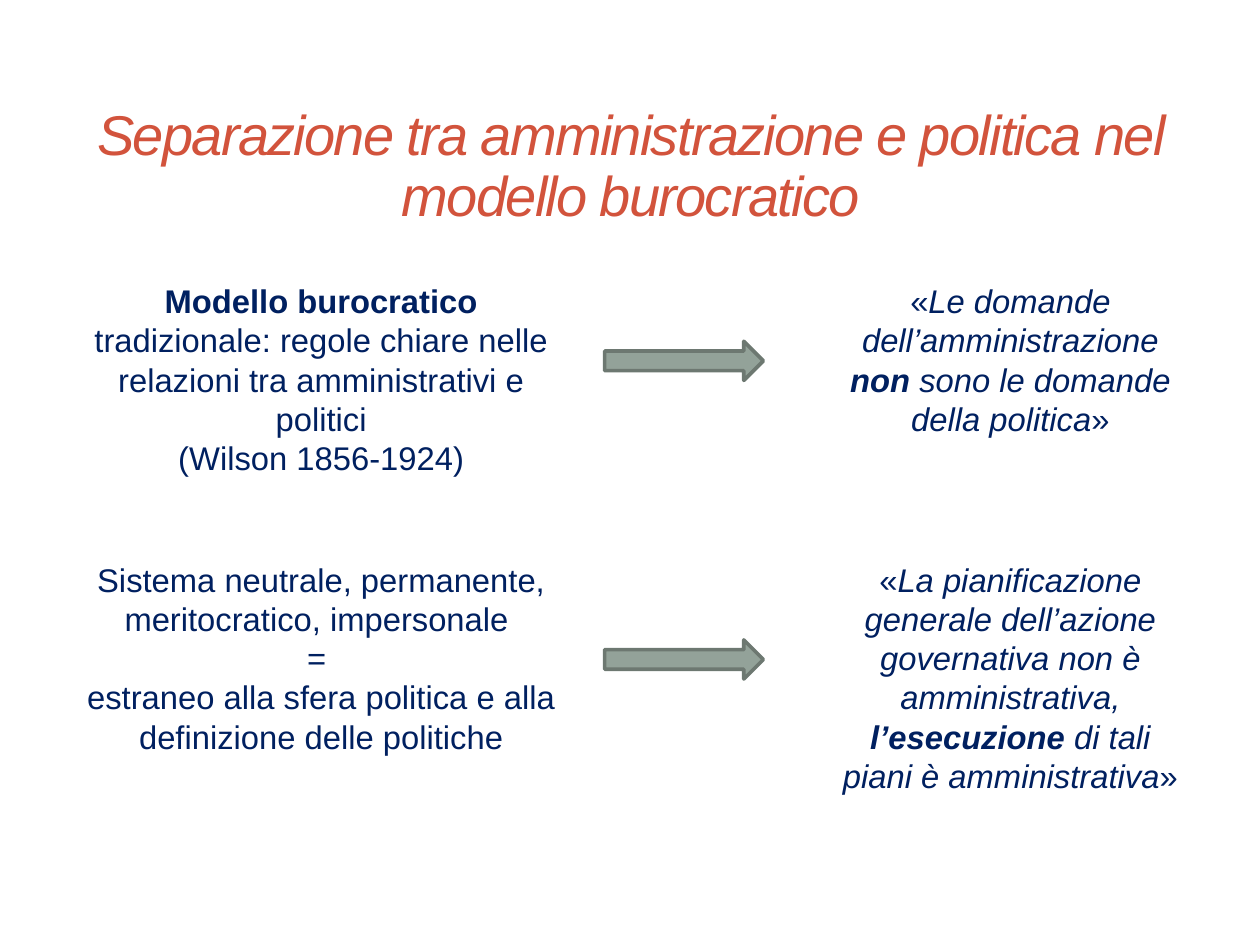
from pptx import Presentation
from pptx.dml.color import RGBColor
from pptx.enum.shapes import MSO_SHAPE as Shape
from pptx.enum.text import MSO_ANCHOR as Anchor, MSO_AUTO_SIZE as AutoSize, PP_ALIGN as Align
from pptx.util import Cm, Pt

COLORS = {"title": "D2533C", "text": "002060", "arrow": "93A299", "outline": "6D7871"}
FONT = "Arial"
TITLE = "Separazione tra amministrazione e politica nel modello burocratico"
LEFT_TEXTS = [
    [
        [("Modello burocratico ", "b"),
         ("tradizionale: regole chiare nelle relazioni tra amministrativi e politici", "")],
        [("(Wilson 1856-1924)", "")],
    ],
    [
        [("Sistema neutrale, permanente, meritocratico, impersonale ", "")],
        [("= ", "")],
        [("estraneo alla sfera politica e alla definizione delle politiche", "")],
    ],
]
QUOTES = [
    [[("«", ""), ("Le domande dell’amministrazione ", "i"), ("non", "bi"),
      (" sono le domande della politica", "i"), ("»", "")]],
    [[("«", ""),
      ("La pianificazione generale dell’azione governativa non è amministrativa, ", "i"),
      ("l’esecuzione", "bi"), (" di tali piani è amministrativa", "i"), ("»", "")]],
]
ROW_TOPS = [5.54, 11.15]
LEFT_HEIGHTS = [4.24, 4.24]
QUOTE_HEIGHTS = [3.45, 5.05]
ARROW_TOPS = [6.88, 12.9]


def rgb(name):
    """Return the named colour."""
    return RGBColor.from_string(COLORS[name])


def format_run(run, size, color, style):
    """Set font, size, colour and the bold and italic flags of a run."""
    font = run.font
    font.name, font.size = FONT, Pt(size)
    font.color.rgb = rgb(color)
    font.bold, font.italic = "b" in style, "i" in style


def set_title(slide):
    """Place and format the title placeholder."""
    title = slide.shapes.title
    title.left, title.top, title.width, title.height = Cm(1.22), Cm(1.96), Cm(22.99), Cm(2.82)
    frame = title.text_frame
    frame.text = TITLE
    frame.word_wrap, frame.auto_size = True, AutoSize.NONE
    frame.vertical_anchor = Anchor.BOTTOM
    frame.margin_left = frame.margin_right = Cm(0.33)
    frame.margin_top = frame.margin_bottom = Cm(0.18)
    paragraph = frame.paragraphs[0]
    paragraph.alignment, paragraph.line_spacing = Align.CENTER, 0.9
    run = paragraph.runs[0]
    format_run(run, 32, "title", "i")
    run.font._element.set("spc", "-100")


def add_text(slide, left, top, width, height, paragraphs):
    """Add a centred text box made of styled runs."""
    frame = slide.shapes.add_textbox(Cm(left), Cm(top), Cm(width), Cm(height)).text_frame
    frame.word_wrap, frame.auto_size = True, AutoSize.SHAPE_TO_FIT_TEXT
    for index, runs in enumerate(paragraphs):
        paragraph = frame.add_paragraph() if index else frame.paragraphs[0]
        paragraph.alignment = Align.CENTER
        for text, style in runs:
            run = paragraph.add_run()
            run.text = text
            format_run(run, 18.7, "text", style)


def add_arrow(slide, top):
    """Add an outlined block arrow pointing from statement to quote."""
    arrow = slide.shapes.add_shape(Shape.RIGHT_ARROW, Cm(12.19), Cm(top), Cm(3.2), Cm(0.79))
    arrow.shadow.inherit = False
    arrow.fill.solid()
    arrow.fill.fore_color.rgb = rgb("arrow")
    arrow.line.color.rgb = rgb("outline")
    arrow.line.width = Pt(2.08)


def main():
    """Build and save the slide."""
    presentation = Presentation()
    presentation.slide_width, presentation.slide_height = Cm(25.4), Cm(19.05)
    slide = presentation.slides.add_slide(presentation.slide_layouts[5])
    set_title(slide)
    for top, height, paragraphs in zip(ROW_TOPS, LEFT_HEIGHTS, LEFT_TEXTS):
        add_text(slide, 1.33, top, 10.29, height, paragraphs)
    for top, height, paragraphs in zip(ROW_TOPS, QUOTE_HEIGHTS, QUOTES):
        add_text(slide, 16.66, top, 7.42, height, paragraphs)
    for top in ARROW_TOPS:
        add_arrow(slide, top)
    presentation.save("out.pptx")


if __name__ == "__main__":
    main()
